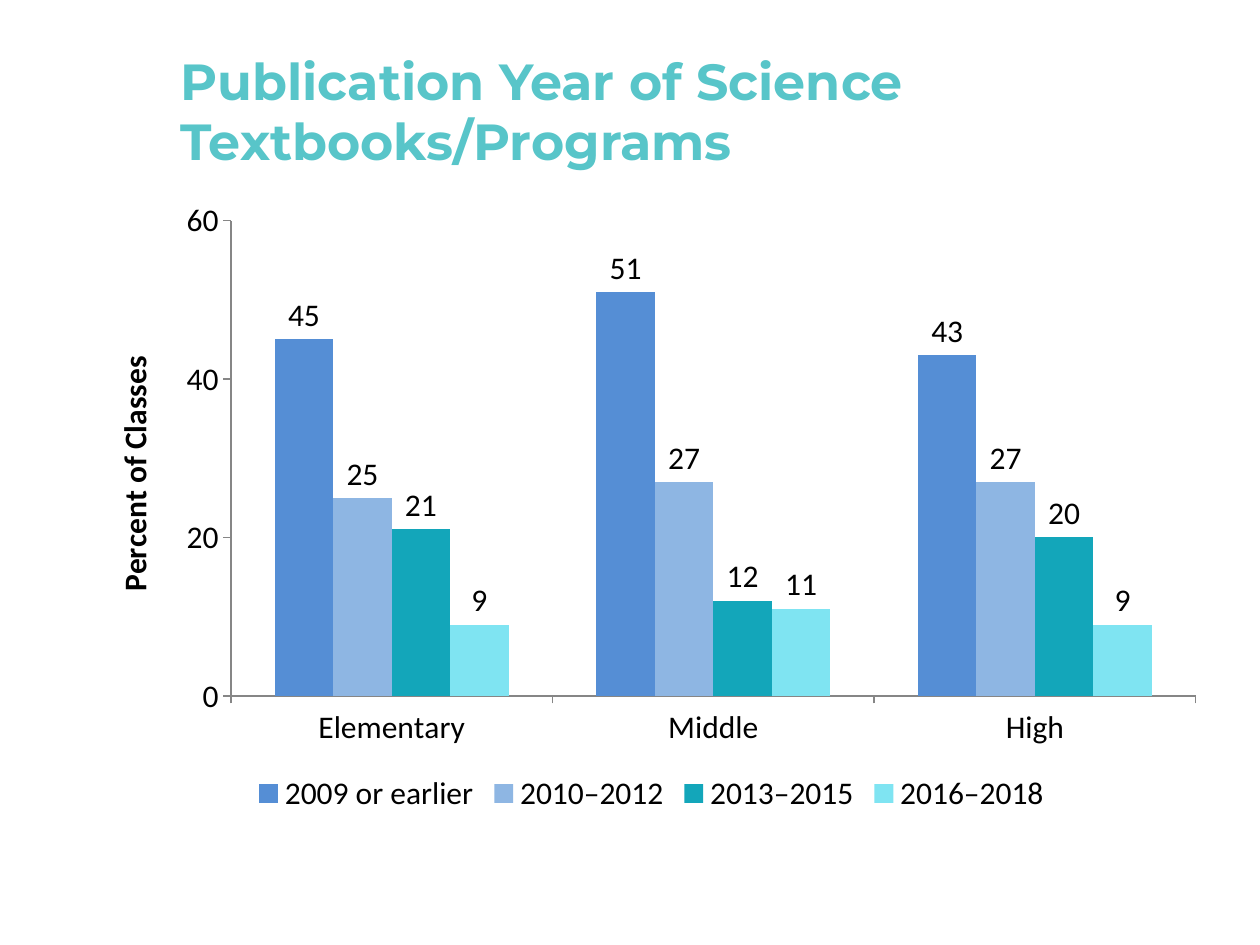
import pptx
import pptx.chart.data
import pptx.dml.color
import pptx.enum.chart
import pptx.enum.text
import pptx.util

RGBColor = pptx.dml.color.RGBColor
BLACK = RGBColor(0x00, 0x00, 0x00)
AXIS_GRAY = RGBColor(0x86, 0x86, 0x86)
TITLE_TEAL = RGBColor(0x58, 0xC5, 0xC9)

LEVELS = ["Elementary", "Middle", "High"]
PUBLICATION_YEARS = [
    ("2009 or earlier", (45, 51, 43), RGBColor(0x55, 0x8E, 0xD5)),
    ("2010–2012", (25, 27, 27), RGBColor(0x8E, 0xB6, 0xE3)),
    ("2013–2015", (21, 12, 20), RGBColor(0x13, 0xA6, 0xBA)),
    ("2016–2018", (9, 11, 9), RGBColor(0x7F, 0xE4, 0xF2)),
]

deck = pptx.Presentation()
deck.slide_width = pptx.util.Inches(10)
deck.slide_height = pptx.util.Inches(7.5)
slide = deck.slides.add_slide(deck.slide_layouts[5])

# Title
heading = slide.shapes.title
heading.left, heading.top = pptx.util.Inches(1.33), pptx.util.Inches(0.25)
heading.width, heading.height = pptx.util.Inches(8.17), pptx.util.Inches(1.25)
heading.text_frame.text = "Publication Year of Science Textbooks/Programs"
heading.text_frame.word_wrap = True
heading.text_frame.auto_size = pptx.enum.text.MSO_AUTO_SIZE.NONE
heading.text_frame.vertical_anchor = pptx.enum.text.MSO_ANCHOR.MIDDLE
heading_line = heading.text_frame.paragraphs[0]
heading_line.alignment = pptx.enum.text.PP_ALIGN.LEFT
heading_line.font.name = "Montserrat"
heading_line.font.size = pptx.util.Pt(29)
heading_line.font.bold = True
heading_line.font.color.rgb = TITLE_TEAL

# Clustered columns by school level
class_data = pptx.chart.data.CategoryChartData(number_format="0")
class_data.categories = LEVELS
for years, percents, _ in PUBLICATION_YEARS:
    class_data.add_series(years, percents)
chart = slide.shapes.add_chart(
    pptx.enum.chart.XL_CHART_TYPE.COLUMN_CLUSTERED,
    pptx.util.Inches(0.67), pptx.util.Inches(1.5),
    pptx.util.Inches(9), pptx.util.Inches(5), class_data,
).chart
chart.has_title = False
chart.font.name = "Calibri"
chart.font.size = pptx.util.Pt(18)
chart.font.color.rgb = BLACK

columns = chart.plots[0]
columns.gap_width = 150
columns.overlap = 0
columns.vary_by_categories = False
for series, (_, _, color) in zip(columns.series, PUBLICATION_YEARS):
    series.format.fill.solid()
    series.format.fill.fore_color.rgb = color
    series.invert_if_negative = False
    series.data_labels.show_value = True
    series.data_labels.position = pptx.enum.chart.XL_LABEL_POSITION.OUTSIDE_END

# Axes and legend
for axis in (chart.category_axis, chart.value_axis):
    axis.has_major_gridlines = False
    axis.major_tick_mark = pptx.enum.chart.XL_TICK_MARK.OUTSIDE
    axis.minor_tick_mark = pptx.enum.chart.XL_TICK_MARK.NONE
    axis.format.line.color.rgb = AXIS_GRAY
    axis.format.line.width = pptx.util.Pt(0.75)

percent_axis = chart.value_axis
percent_axis.minimum_scale = 0
percent_axis.maximum_scale = 60
percent_axis.major_unit = 20
percent_axis.axis_title.text_frame.text = "Percent of Classes"
axis_caption = percent_axis.axis_title.text_frame.paragraphs[0]
axis_caption.font.name = "Calibri"
axis_caption.font.size = pptx.util.Pt(18)
axis_caption.font.bold = True
axis_caption.font.color.rgb = BLACK

chart.has_legend = True
chart.legend.position = pptx.enum.chart.XL_LEGEND_POSITION.BOTTOM
chart.legend.include_in_layout = False

deck.save("out.pptx")
